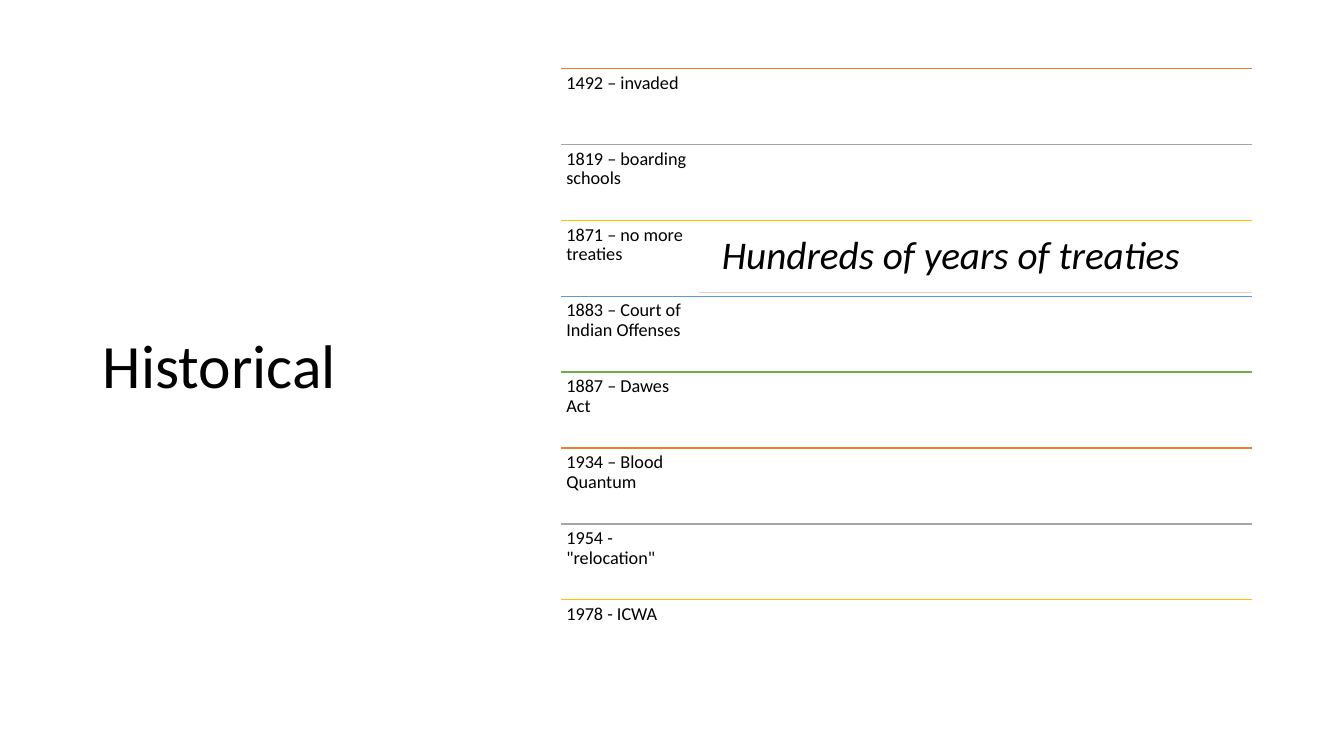
from dataclasses import dataclass

from pptx import Presentation
from pptx.dml.color import RGBColor
from pptx.enum.shapes import MSO_CONNECTOR
from pptx.enum.text import MSO_ANCHOR, MSO_AUTO_SIZE, PP_ALIGN
from pptx.oxml.ns import qn
from pptx.slide import Slide
from pptx.text.text import TextFrame
from pptx.util import Pt
from lxml import etree

LINE = MSO_CONNECTOR.STRAIGHT
TOP, MIDDLE = MSO_ANCHOR.TOP, MSO_ANCHOR.MIDDLE
LEFT = PP_ALIGN.LEFT
NO_FIT = MSO_AUTO_SIZE.NONE

BLACK = RGBColor(0x00, 0x00, 0x00)
ORANGE = RGBColor(0xED, 0x7D, 0x31)
GRAY = RGBColor(0xA5, 0xA5, 0xA5)
GOLD = RGBColor(0xFF, 0xC0, 0x00)
BLUE = RGBColor(0x59, 0x9B, 0xD5)
GREEN = RGBColor(0x70, 0xAD, 0x47)
PEACH = RGBColor(0xF5, 0xCB, 0xBC)

# Timeline grid, in points
START, END = 401, 894.2
FIRST, PITCH = 49, 54.2
DATE_WIDTH = 98.6


@dataclass
class Event:
    text: str
    color: RGBColor
    detail: str = ""


EVENTS = [
    Event("1492 – invaded", ORANGE),
    Event("1819 – boarding schools", GRAY),
    Event("1871 – no more treaties", GOLD, "Hundreds of years of treaties"),
    Event("1883 – Court of Indian Offenses", BLUE),
    Event("1887 – Dawes Act", GREEN),
    Event("1934 – Blood Quantum", ORANGE),
    Event('1954 - "relocation"', GRAY),
    Event("1978 - ICWA", GOLD),
]


def write(frame: TextFrame, text: str, size: float, side: float, edge: float,
          anchor: MSO_ANCHOR = TOP, italic: bool = False) -> None:
    frame.text = text
    frame.word_wrap = True
    frame.auto_size = NO_FIT
    frame.vertical_anchor = anchor
    frame.margin_left = frame.margin_right = Pt(side)
    frame.margin_top = frame.margin_bottom = Pt(edge)
    para = frame.paragraphs[0]
    para.alignment = LEFT
    para.line_spacing = 0.9
    para.font.name = "Calibri"
    para.font.size = Pt(size)
    para.font.italic = italic
    para.font.color.rgb = BLACK


def add_rule(slide: Slide, left: float, top: float, color: RGBColor) -> None:
    rule = slide.shapes.add_connector(LINE, Pt(left), Pt(top), Pt(END), Pt(top))
    rule.line.color.rgb = color
    rule.line.width = Pt(1)
    etree.SubElement(rule._element.spPr, qn("a:effectLst"))


def add_event(slide: Slide, event: Event, top: float) -> None:
    add_rule(slide, START, top, event.color)
    date = slide.shapes.add_textbox(Pt(START), Pt(top), Pt(DATE_WIDTH), Pt(PITCH))
    write(date.text_frame, event.text, 13, 3.6, 3.6)
    if event.detail:
        left = START + DATE_WIDTH + 7.4
        box = slide.shapes.add_textbox(Pt(left), Pt(top + 2.5), Pt(END - left), Pt(49.2))
        write(box.text_frame, event.detail, 28, 8.6, 8.6, italic=True)
        add_rule(slide, START + DATE_WIDTH, top + 51.7, PEACH)


def main() -> None:
    deck = Presentation()
    deck.slide_width, deck.slide_height = Pt(960), Pt(540)
    slide = deck.slides.add_slide(deck.slide_layouts.get_by_name("Title Only"))

    # Title
    title = slide.shapes.title
    title.left, title.top = Pt(66.2), Pt(43.9)
    title.width, title.height = Pt(265.7), Pt(438.5)
    write(title.text_frame, "Historical", 44, 7.2, 3.6, MIDDLE)

    # Timeline
    for row, event in enumerate(EVENTS):
        add_event(slide, event, FIRST + row * PITCH)

    deck.save("out.pptx")


if __name__ == "__main__":
    main()
